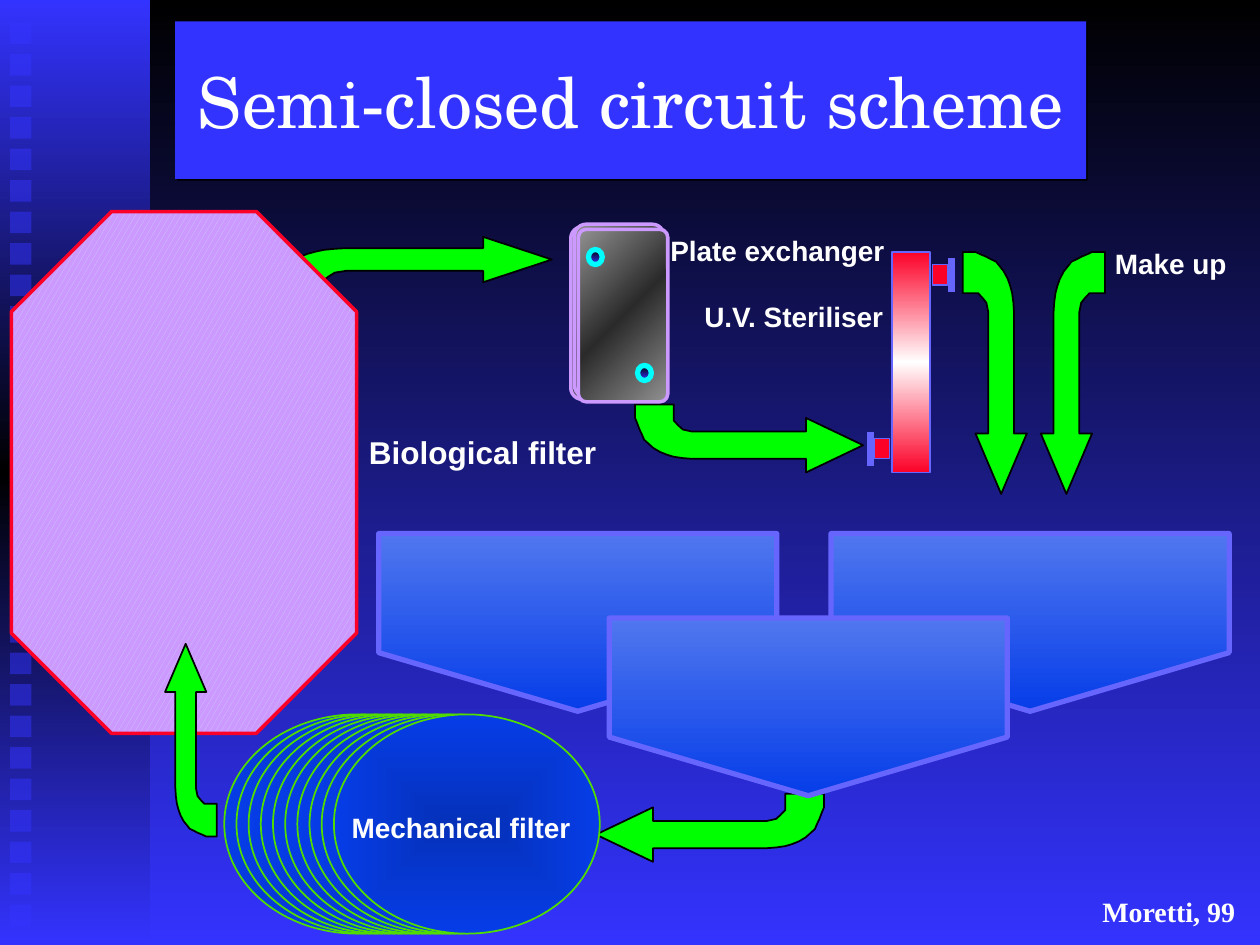
from typing import NamedTuple

from lxml.etree import SubElement, fromstring
from pptx import Presentation
from pptx.dml.color import RGBColor
from pptx.enum.dml import MSO_PATTERN
from pptx.enum.shapes import MSO_CONNECTOR, MSO_SHAPE as Kind
from pptx.enum.text import MSO_ANCHOR, MSO_AUTO_SIZE, PP_ALIGN
from pptx.oxml.ns import nsdecls, qn
from pptx.util import Inches, Pt

BLUE, EDGE, RED, LILAC = "3333FF", "6666FF", "FC0128", "CC99FF"
GREEN, BLACK, WHITE = "00FF00", "000000", "FFFFFF"
STEEL = ("919191", "2B2B2B", "919191")

# Outline of a bent arrow: share of its length, share of its breadth
BEND = [
    (0.75, 1), (1, 0.6), (0.75, 0.2), (0.75, 0.4), (0.25, 0.4), (0.21, 0.37),
    (0.19, 0.31), (0.17, 0.24), (0.17, 0.13), (0.17, 0), (0, 0), (0, 0.2),
    (0.01, 0.28), (0.02, 0.37), (0.03, 0.44), (0.04, 0.52), (0.06, 0.58),
    (0.08, 0.64), (0.11, 0.7), (0.14, 0.74), (0.17, 0.77), (0.21, 0.79),
    (0.25, 0.8), (0.75, 0.8),
]


class Arrow(NamedTuple):
    """Tail corner, signed width and height, and direction of the shaft."""
    x: float
    y: float
    w: float
    h: float
    tall: bool = False


class Label(NamedTuple):
    text: str
    x: float
    y: float
    w: float
    h: float
    size: int = 16
    face: str = "Arial"
    pad: float = 0.1


DRAIN = Arrow(6.54, 6.3, -1.81, 0.54)
OUTLET = Arrow(2.2, 2.33, 2.18, -0.45)
FEED = Arrow(5.04, 3.21, 1.81, 0.54)
RETURN = Arrow(7.64, 2, 0.51, 1.92, True)
MAKEUP = Arrow(8.77, 2, -0.51, 1.92, True)
RISER = Arrow(1.72, 6.64, -0.41, -1.53, True)


def rgb(code: str) -> RGBColor:
    return RGBColor.from_string(code)


def stroke(line, color: str, width: float) -> None:
    line.color.rgb = rgb(color)
    line.width = Pt(width)


def blend(shape, colors, angle: int = 90, radial: bool = False) -> None:
    """Fill a shape with evenly spaced gradient stops."""
    step = 100000 // (len(colors) - 1)
    stops = "".join(
        f'<a:gs pos="{i * step}"><a:srgbClr val="{c}"/></a:gs>'
        for i, c in enumerate(colors))
    if radial:
        course = ('<a:path path="shape"><a:fillToRect l="50000" t="50000" '
                  'r="50000" b="50000"/></a:path>')
    else:
        course = f'<a:lin ang="{angle * 60000}" scaled="0"/>'
    shape.fill.background()
    props = shape._element.spPr
    props.replace(props.find(qn("a:noFill")), fromstring(
        f'<a:gradFill {nsdecls("a")} rotWithShape="1">'
        f"<a:gsLst>{stops}</a:gsLst>{course}</a:gradFill>"))


def block(slide, kind, x: float, y: float, w: float, h: float, *, fill=None,
          line: str = "", width: float = 1, adj=None, **flow):
    """Draw a preset shape; fill is one colour or a tuple of stops."""
    shape = slide.shapes.add_shape(
        kind, Inches(x), Inches(y), Inches(w), Inches(h))
    shape.shadow.inherit = False
    if adj is not None:
        shape.adjustments[0] = adj
    if isinstance(fill, tuple):
        blend(shape, fill, **flow)
    elif fill:
        shape.fill.solid()
        shape.fill.fore_color.rgb = rgb(fill)
    if line:
        stroke(shape.line, line, width)
    else:
        shape.line.fill.background()
    return shape


def bend(slide, arrow: Arrow) -> None:
    pts = []
    for u, v in BEND:
        px, py = (v, u) if arrow.tall else (u, v)
        pts.append((Inches(arrow.x + px * arrow.w),
                    Inches(arrow.y + py * arrow.h)))
    form = slide.shapes.build_freeform(*pts[0])
    form.add_line_segments(pts[1:], close=True)
    shape = form.convert_to_shape()
    shape.shadow.inherit = False
    shape.fill.solid()
    shape.fill.fore_color.rgb = rgb(GREEN)
    stroke(shape.line, BLACK, 1)


def write(frame, text: str, *, size: int, face: str, bold: bool = False,
          pad: float = 0.1, align=PP_ALIGN.LEFT, anchor=MSO_ANCHOR.TOP,
          wrap: bool = True) -> None:
    frame.word_wrap = wrap
    frame.auto_size = MSO_AUTO_SIZE.NONE if wrap else MSO_AUTO_SIZE.SHAPE_TO_FIT_TEXT
    frame.vertical_anchor = anchor
    frame.margin_left = frame.margin_right = Inches(pad)
    frame.margin_top = frame.margin_bottom = Inches(pad / 2)
    para = frame.paragraphs[0]
    para.alignment = align
    run = para.add_run()
    run.text = text
    run.font.size, run.font.name, run.font.bold = Pt(size), face, bold
    run.font.color.rgb = rgb(WHITE)


def label(slide, item: Label) -> None:
    box = slide.shapes.add_textbox(*map(Inches, item[1:5]))
    write(box.text_frame, item.text, size=item.size, face=item.face,
          bold=True, pad=item.pad, wrap=False)


def backdrop(slide) -> None:
    fill = slide.background.fill
    fill.gradient()
    fill.gradient_angle = 270
    for stop, color in zip(fill.gradient_stops, (BLACK, BLUE)):
        stop.color.rgb = rgb(color)
    block(slide, Kind.RECTANGLE, 0, 0, 1.19, 7.5, fill=(BLUE, BLACK, BLUE))
    for i in range(29):
        dot = block(slide, Kind.RECTANGLE, 0.08, 0.18 + i * 0.25, 0.17, 0.17,
                    fill=BLUE)
        tint = dot._element.spPr.find(qn("a:solidFill"))[0]
        SubElement(tint, qn("a:alpha"), val="50000")


def plates(slide) -> None:
    for x, y, adj in ((4.53, 1.8, 0.13), (4.56, 1.78, 0.13), (4.59, 1.82, 0.09)):
        block(slide, Kind.ROUNDED_RECTANGLE, x, y, 0.71, 1.37, fill=STEEL,
              line=LILAC, width=2, adj=adj, angle=45)
    for x, y in ((4.67, 1.98), (5.06, 2.9)):
        block(slide, Kind.OVAL, x, y, 0.11, 0.12, fill=(BLACK, BLUE),
              line="00FFFF", width=3)


def title(slide) -> None:
    shape = block(slide, Kind.RECTANGLE, 1.39, 0.17, 7.23, 1.25, fill=BLUE)
    glow = shape._element.spPr.find(qn("a:effectLst"))
    cast = SubElement(glow, qn("a:outerShdw"), dist=str(Pt(1.4)),
                      dir="2700000", algn="ctr", rotWithShape="0")
    SubElement(cast, qn("a:srgbClr"), val=BLACK)
    write(shape.text_frame, "Semi-closed circuit scheme", size=40,
          face="TeX Gyre Schola", align=PP_ALIGN.CENTER,
          anchor=MSO_ANCHOR.MIDDLE)


def lamp(slide) -> None:
    """Draw the steriliser tube with its two flanged ports."""
    block(slide, Kind.RECTANGLE, 7.08, 2, 0.3, 1.75, fill=(RED, WHITE, RED),
          line=EDGE)
    for rim, port, y in ((6.91, 6.94, 3.43), (7.55, 7.4, 2.05)):
        bar = slide.shapes.add_connector(
            MSO_CONNECTOR.STRAIGHT, Inches(rim), Inches(y), Inches(rim),
            Inches(y + 0.27))
        stroke(bar.line, EDGE, 3.75)
        SubElement(bar._element.spPr, qn("a:effectLst"))
        block(slide, Kind.RECTANGLE, port, y + 0.05, 0.12, 0.16, fill=RED,
              line=EDGE)


def main() -> None:
    deck = Presentation()
    deck.slide_width, deck.slide_height = Inches(10), Inches(7.5)
    slide = deck.slides.add_slide(deck.slide_layouts[6])
    backdrop(slide)
    for arrow in (DRAIN, OUTLET, FEED):
        bend(slide, arrow)
    plates(slide)
    tank = block(slide, Kind.OCTAGON, 0.09, 1.68, 2.74, 4.14, line=RED,
                 width=2, adj=0.29)
    tank.fill.patterned()
    tank.fill.pattern = MSO_PATTERN.LARGE_CONFETTI
    tank.fill.fore_color.rgb, tank.fill.back_color.rgb = rgb("CCCCFF"), rgb(LILAC)
    title(slide)
    for i in range(10):
        block(slide, Kind.OVAL, 1.78 + i * 0.87 / 9, 5.67, 2.11, 1.74,
              fill=("0531BA", "063DE8"), line="51DC00", radial=True)
    lamp(slide)
    for x, y in ((3.88, 3.36), (7.47, 3.36), (5.71, 4.03)):
        basin = block(slide, Kind.PENTAGON, x, y, 1.41, 3.16, line=EDGE,
                      fill=("5077EF", "063DE8"), width=3, adj=0.33, angle=0)
        basin.rotation = 90
    for arrow in (RETURN, MAKEUP, RISER):
        bend(slide, arrow)
    for item in (
        Label("Mechanical filter", 2.72, 6.4, 1.88, 0.33, pad=0.07),
        Label("Plate exchanger", 5.25, 1.82, 1.84, 0.33, pad=0.07),
        Label("U.V. Steriliser", 5.55, 2.36, 1.53, 0.31, pad=0.04),
        Label("Biological filter", 2.83, 3.39, 2.01, 0.4, size=18),
        Label("Make up", 8.75, 1.91, 1.09, 0.37),
        Label("Moretti, 99", 8.65, 7.05, 1.27, 0.37, face="Times New Roman"),
    ):
        label(slide, item)
    deck.save("out.pptx")


if __name__ == "__main__":
    main()
